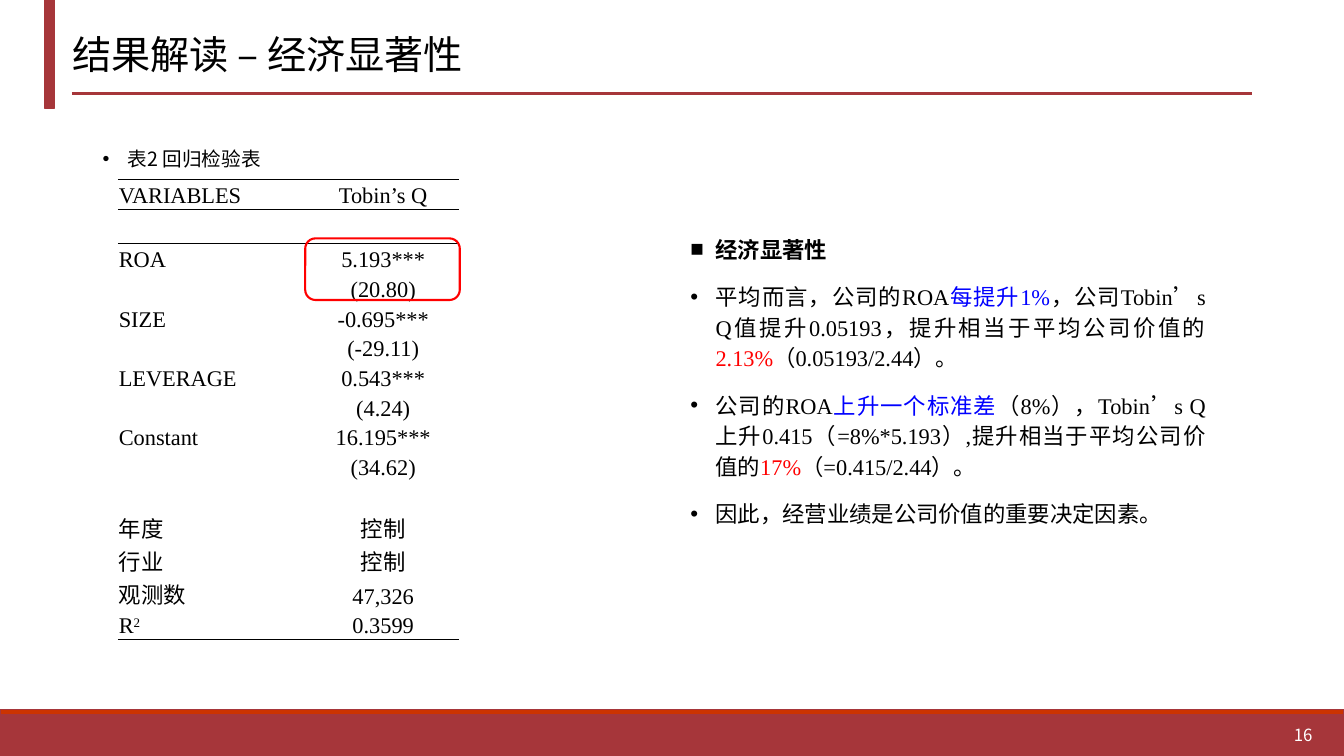
import pptx
import pptx.util
import pptx.dml.color
import pptx.enum.shapes
import pptx.enum.text
from lxml import etree

Pt = pptx.util.Pt
RGB = pptx.dml.color.RGBColor
SHAPE = pptx.enum.shapes.MSO_SHAPE
ALIGN = pptx.enum.text.PP_ALIGN
ANCHOR = pptx.enum.text.MSO_ANCHOR

CRIMSON = RGB(0xA6, 0x36, 0x3A)
ORANGE = RGB(0xCC, 0x33, 0x00)
BLACK = RGB(0, 0, 0)
WHITE = RGB(0xFF, 0xFF, 0xFF)
RED = RGB(0xFF, 0, 0)
BLUE = RGB(0, 0, 0xFF)
SANS = "Noto Sans CJK SC"
SERIF = "Times New Roman"
NS = "{http://schemas.openxmlformats.org/drawingml/2006/main}"
PLAIN_TABLE = "{2D5ABB26-0587-4C30-8999-92F81FD0307C}"

# Content
TITLE = "结果解读 – 经济显著性"
PAGE = "16"
CAPTION = "表2 回归检验表"
REGRESSION = [
    ("VARIABLES", "Tobin’s Q"),
    ("", ""),
    ("ROA", "5.193***"),
    ("", "(20.80)"),
    ("SIZE", "-0.695***"),
    ("", "(-29.11)"),
    ("LEVERAGE", "0.543***"),
    ("", "(4.24)"),
    ("Constant", "16.195***"),
    ("", "(34.62)"),
    ("", ""),
    ("年度", "控制"),
    ("行业", "控制"),
    ("观测数", "47,326"),
    ("R2", "0.3599"),
]
# Each paragraph: bullet, bold, runs of (text, colour)
FINDINGS = [
    ("■", True, [("经济显著性", BLACK)]),
    ("•", False, [
        ("平均而言，公司的ROA", BLACK), ("每提升1%", BLUE),
        ("，公司Tobin’s Q值提升0.05193，提升相当于平均公司价值的", BLACK),
        ("2.13%", RED), ("（0.05193/2.44）。", BLACK)]),
    ("•", False, [
        ("公司的ROA", BLACK), ("上升一个标准差", BLUE),
        ("（8%），Tobin’s Q上升0.415（=8%*5.193）,提升相当于平均公司价值的", BLACK),
        ("17%", RED), ("（=0.415/2.44）。", BLACK)]),
    ("•", False, [("因此，经营业绩是公司价值的重要决定因素。", BLACK)]),
]

# Geometry
SLIDE_W, SLIDE_H = 960, 540
BARS = [  # left, top, width, height, fill
    (0, 510.2, SLIDE_W, 29.8, CRIMSON),
    (0, 506.7, SLIDE_W, 3.5, ORANGE),
    (31.6, 0, 7.4, 77.2, CRIMSON),
]
TABLE_LEFT, TABLE_TOP = 84.2, 128
COLUMN_WIDTHS = (135.2, 108.7)
ROW_HEIGHT = 21.23
TALL_ROWS = {1: 24.8, 11: 23.6, 12: 23.6, 13: 23.6}
RULES = {0: ("lnT", "lnB"), 1: ("lnT",), len(REGRESSION) - 1: ("lnB",)}


def style_run(run, size, font, color, bold=False):
    run.font.size = Pt(size)
    run.font.name = font
    run.font.bold = bold
    run.font.color.rgb = color
    east_asian = etree.Element(NS + "ea", typeface=SANS)
    run.font._element.find(NS + "latin").addnext(east_asian)


def add_bullet(paragraph, mark):
    paragraph.alignment = ALIGN.JUSTIFY
    paragraph.line_spacing = 1.14
    paragraph.space_after = Pt(12)
    properties = paragraph._p.get_or_add_pPr()
    properties.set("marL", str(Pt(18)))
    properties.set("indent", str(-Pt(18)))
    etree.SubElement(properties, NS + "buFont", typeface="Arial")
    etree.SubElement(properties, NS + "buChar", char=mark)


def add_text_frame(left, top, width, height, anchor=ANCHOR.TOP):
    box = slide.shapes.add_textbox(Pt(left), Pt(top), Pt(width), Pt(height))
    box.text_frame.word_wrap = True
    box.text_frame.vertical_anchor = anchor
    return box.text_frame


def add_rule(cell, side):
    border = etree.SubElement(cell._tc.get_or_add_tcPr(), NS + side, w=str(Pt(0.5)))
    fill = etree.SubElement(border, NS + "solidFill")
    etree.SubElement(fill, NS + "srgbClr", val=str(BLACK))


deck = pptx.Presentation()
deck.slide_width, deck.slide_height = Pt(SLIDE_W), Pt(SLIDE_H)
slide = deck.slides.add_slide(deck.slide_layouts[6])

# Frame: footer, side bar and title rule
for left, top, width, height, color in BARS:
    bar = slide.shapes.add_shape(SHAPE.RECTANGLE, Pt(left), Pt(top), Pt(width), Pt(height))
    bar.shadow.inherit = False
    bar.fill.solid()
    bar.fill.fore_color.rgb = color
    bar.line.color.rgb = CRIMSON
    bar.line.width = Pt(1)
title_rule = slide.shapes.add_connector(
    pptx.enum.shapes.MSO_CONNECTOR.STRAIGHT, Pt(51.4), Pt(66.8), Pt(894.2), Pt(66.8))
title_rule.line.color.rgb = CRIMSON
title_rule.line.width = Pt(2.25)
etree.SubElement(title_rule._element.spPr, NS + "effectLst")

# Title and page number
title = add_text_frame(44.4, 0, 869, 77.2, ANCHOR.MIDDLE)
title.text = TITLE
style_run(title.paragraphs[0].runs[0], 28, SANS, BLACK)
page = add_text_frame(728.6, 510.2, 216, 28.8, ANCHOR.MIDDLE)
page.text = PAGE
page.paragraphs[0].alignment = ALIGN.RIGHT
style_run(page.paragraphs[0].runs[0], 12, SANS, WHITE)

# Regression table
table_frame = slide.shapes.add_table(
    len(REGRESSION), len(COLUMN_WIDTHS), Pt(TABLE_LEFT), Pt(TABLE_TOP),
    Pt(sum(COLUMN_WIDTHS)), Pt(ROW_HEIGHT * len(REGRESSION)))
table = table_frame.table
table_frame._element.find(".//" + NS + "tableStyleId").text = PLAIN_TABLE
table.first_row = table.horz_banding = False
for column, width in zip(table.columns, COLUMN_WIDTHS):
    column.width = Pt(width)
for r, entries in enumerate(REGRESSION):
    table.rows[r].height = Pt(TALL_ROWS.get(r, ROW_HEIGHT))
    for c, entry in enumerate(entries):
        cell = table.cell(r, c)
        cell.margin_left = cell.margin_right = cell.margin_top = Pt(0.7)
        cell.margin_bottom = Pt(0.5)
        cell.vertical_anchor = ANCHOR.BOTTOM
        for side in RULES.get(r, ()):
            add_rule(cell, side)
        cell.fill.background()
        paragraph = cell.text_frame.paragraphs[0]
        paragraph.alignment = ALIGN.CENTER if c else ALIGN.LEFT
        if not entry:
            etree.SubElement(paragraph._p, NS + "endParaRPr", sz="1400")
            continue
        for piece in (entry if entry == "R2" else [entry]):
            run = paragraph.add_run()
            run.text = piece
            style_run(run, 16, SERIF, BLACK)
            if piece == "2":
                run.font._element.set("baseline", "30000")

# Highlight around the ROA estimate
highlight = slide.shapes.add_shape(
    SHAPE.ROUNDED_RECTANGLE, Pt(218), Pt(170.3), Pt(110.4), Pt(44))
highlight.shadow.inherit = False
highlight.fill.background()
highlight.line.color.rgb = RED
highlight.line.width = Pt(1.5)

# Findings
findings = add_text_frame(486, 130.3, 382.3, 280)
findings.margin_top = Pt(35.5)
for i, (mark, bold, pieces) in enumerate(FINDINGS):
    paragraph = findings.add_paragraph() if i else findings.paragraphs[0]
    add_bullet(paragraph, mark)
    for piece, color in pieces:
        run = paragraph.add_run()
        run.text = piece
        style_run(run, 16, SERIF, color, bold)

# Table caption
caption = add_text_frame(66.2, 99, 157, 29.5)
caption.text = CAPTION
add_bullet(caption.paragraphs[0], "•")
style_run(caption.paragraphs[0].runs[0], 14, SANS, BLACK)

deck.save("out.pptx")
